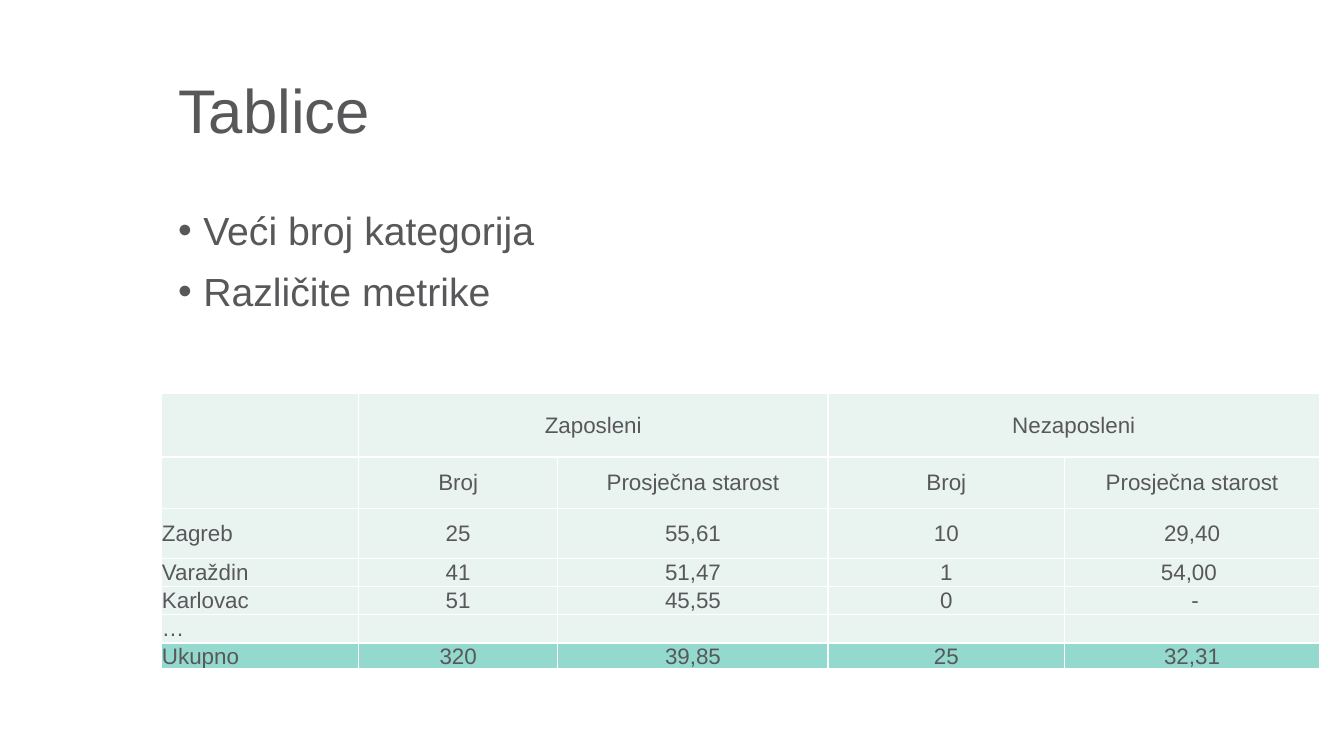
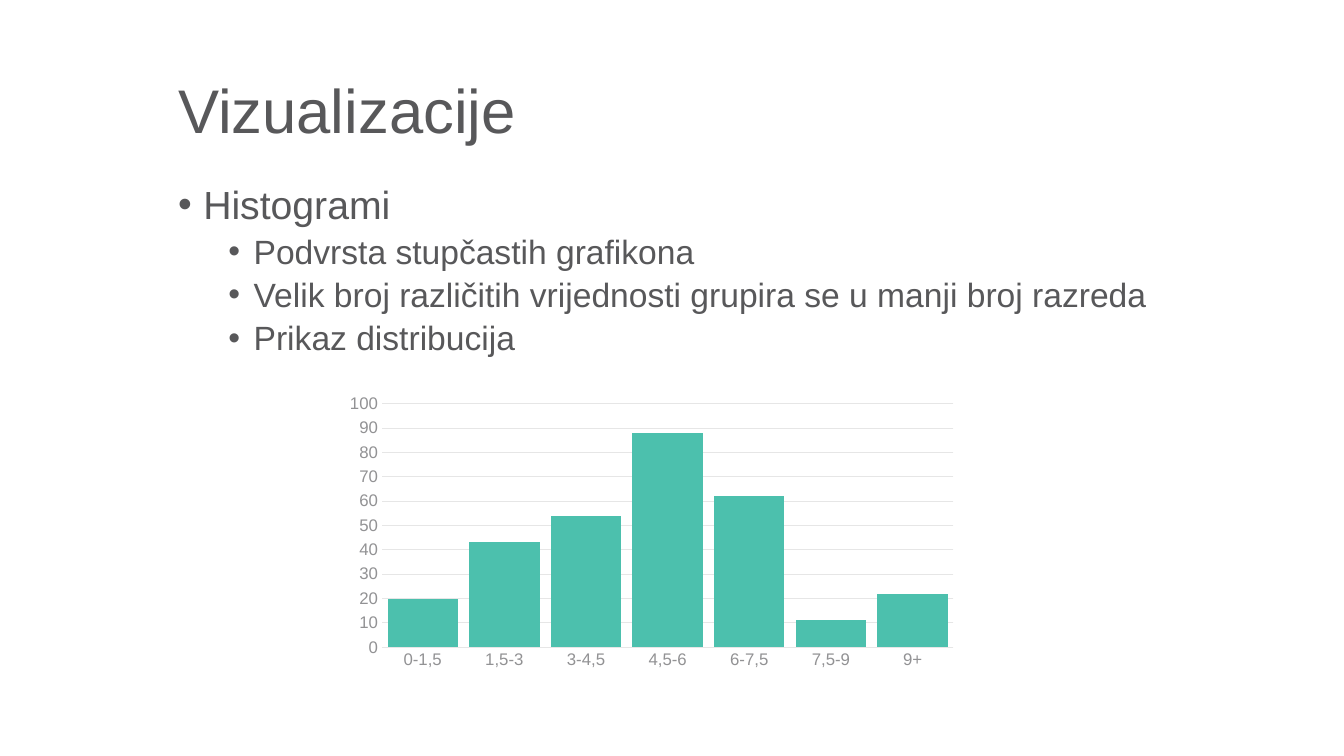
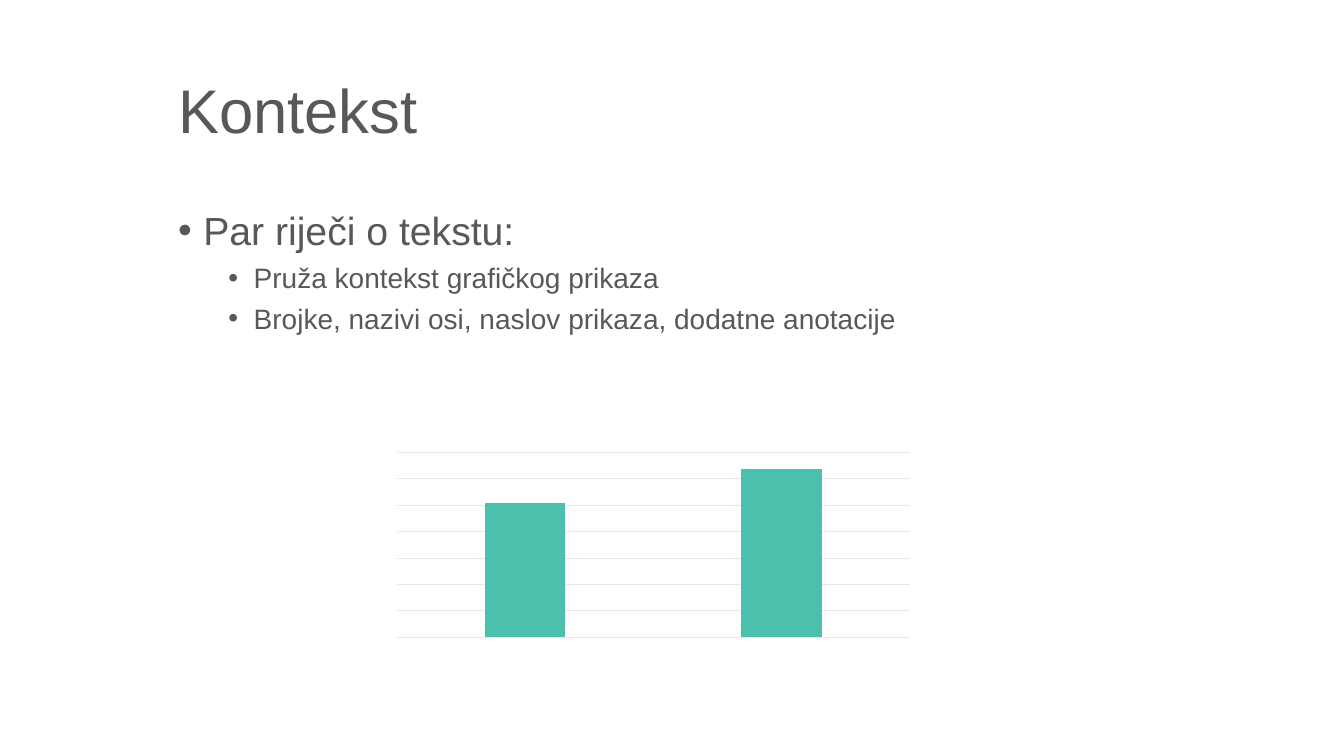
"""Builds three slides on tables, histograms and the context of charts."""
import lxml.etree
import pptx
import pptx.chart.data
import pptx.dml.color
import pptx.enum.chart
import pptx.enum.dml
import pptx.enum.text
import pptx.oxml.ns
import pptx.util

Pt = pptx.util.Pt
RGBColor = pptx.dml.color.RGBColor
ALIGN = pptx.enum.text.PP_ALIGN
MIDDLE = pptx.enum.text.MSO_ANCHOR.MIDDLE

FONT = "Arial"
GREY = RGBColor(0x58, 0x58, 0x5A)
LABEL_GREY = RGBColor(0x92, 0x92, 0x94)
GRID_GREY = RGBColor(0xE6, 0xE6, 0xE6)
WHITE = RGBColor(0xFF, 0xFF, 0xFF)
PALE_MINT = RGBColor(0xE9, 0xF4, 0xF1)
MINT = RGBColor(0x94, 0xD9, 0xCE)
TEAL = RGBColor(0x4C, 0xC0, 0xAD)

LEFT, CONTENT_WIDTH = 120, 774
INDENT = 18
CELL_MARGIN = 0.72
COLUMN_WIDTHS = [141, 142.5, 193, 169, 182]
ROW_HEIGHTS = [45.5, 36.5, 36, 20, 20, 20, 18]
REGIONS = [
    ["", "Zaposleni", "", "Nezaposleni", ""],
    ["", "Broj", "Prosječna starost", "Broj", "Prosječna starost"],
    ["Zagreb", "25", "55,61", "10", "29,40"],
    ["Varaždin", "41", "51,47", "1", "54,00 "],
    ["Karlovac", "51", "45,55", "0", " -"],
    ["…", "", "", "", ""],
    ["Ukupno", "320", "39,85", "25", "32,31"],
]
CLASSES = ["0-1,5", "1,5-3", "3-4,5", "4,5-6", "6-7,5", "7,5-9", "9+"]


def add_xml(parent, tag, **attributes):
    """Append a DrawingML element and return it."""
    return lxml.etree.SubElement(parent, pptx.oxml.ns.qn(tag), attributes)


def style_font(font, size, color=GREY):
    """Set the typeface, size and colour of a font."""
    font.name = FONT
    font.size = Pt(size)
    font.color.rgb = color


def style_runs(paragraph, size):
    """Format all runs of a paragraph."""
    for run in paragraph.runs:
        style_font(run.font, size)


def place(shape, left, top, width, height):
    """Move and size a shape, in points."""
    shape.left, shape.top = Pt(left), Pt(top)
    shape.width, shape.height = Pt(width), Pt(height)


def add_slide(deck, heading, points, body_top=144, sub_size=24, line_spacing=1.0):
    """Add a slide with a title and a list of (level, text) points."""
    slide = deck.slides.add_slide(deck.slide_layouts[1])
    title, body = slide.placeholders
    place(title, LEFT, 29, CONTENT_WIDTH, 104)
    title.text_frame.text = heading
    title.text_frame.vertical_anchor = MIDDLE
    title.text_frame.auto_size = pptx.enum.text.MSO_AUTO_SIZE.NONE
    heading_line = title.text_frame.paragraphs[0]
    heading_line.alignment = ALIGN.LEFT
    heading_line.line_spacing = 0.9
    style_runs(heading_line, 44)

    place(body, LEFT, body_top, CONTENT_WIDTH, 343)
    body.text_frame.auto_size = pptx.enum.text.MSO_AUTO_SIZE.NONE
    body.text_frame.text = "\n".join(text for _, text in points)
    for index, (level, _) in enumerate(points):
        point = body.text_frame.paragraphs[index]
        add_bullet(point, level)
        point.line_spacing = line_spacing
        point.space_before = Pt((5 if level else 10) if index else 0)
        style_runs(point, sub_size if level else 28)
    return slide


def add_bullet(paragraph, level):
    """Give a paragraph a level, a hanging indent and a round bullet."""
    paragraph.level = level
    properties = paragraph._p.get_or_add_pPr()
    properties.set("marL", str(Pt(INDENT * (1 + 2 * level))))
    properties.set("indent", str(-Pt(INDENT)))
    add_xml(properties, "a:buFont", typeface=FONT)
    add_xml(properties, "a:buChar", char="•")


def add_borders(cell):
    """Draw white lines around a table cell."""
    properties = cell._tc.get_or_add_tcPr()
    for side in "LRTB":
        line = add_xml(properties, f"a:ln{side}", w=str(Pt(1)))
        fill = add_xml(line, "a:solidFill")
        add_xml(fill, "a:srgbClr", val=str(WHITE))


def fill_cell(cell, text, fill, alignment):
    """Write and format one table cell."""
    add_borders(cell)
    cell.fill.solid()
    cell.fill.fore_color.rgb = fill
    cell.margin_left = cell.margin_right = cell.margin_top = Pt(CELL_MARGIN)
    cell.margin_bottom = 0
    cell.vertical_anchor = MIDDLE
    paragraph = cell.text_frame.paragraphs[0]
    paragraph.alignment = alignment
    if text:
        paragraph.text = text
        style_runs(paragraph, 16)
    else:
        add_xml(paragraph._p, "a:endParaRPr", sz="1600")


def add_region_table(slide):
    """Add the table of regions with grouped headings and a total row."""
    table = slide.shapes.add_table(
        len(REGIONS), len(COLUMN_WIDTHS), Pt(115), Pt(281),
        Pt(sum(COLUMN_WIDTHS)), Pt(sum(ROW_HEIGHTS))).table
    table.first_row = table.horz_banding = False
    for column, width in zip(table.columns, COLUMN_WIDTHS):
        column.width = Pt(width)
    for row, height in zip(table.rows, ROW_HEIGHTS):
        row.height = Pt(height)
    for y, region in enumerate(REGIONS):
        fill = MINT if region[0] == "Ukupno" else PALE_MINT
        for x, text in enumerate(region):
            fill_cell(table.cell(y, x), text, fill, ALIGN.CENTER if x else ALIGN.LEFT)
    for x in (1, 3):
        table.cell(0, x).merge(table.cell(0, x + 1))


def add_columns(slide, box, categories, values, gap, step, steps):
    """Add a plain column chart whose value axis has equal steps from zero."""
    data = pptx.chart.data.CategoryChartData()
    data.categories = categories
    data.add_series("Series 1", values)
    chart = slide.shapes.add_chart(
        pptx.enum.chart.XL_CHART_TYPE.COLUMN_CLUSTERED, *map(Pt, box), data).chart
    chart.has_title = chart.has_legend = False
    style_font(chart.font, 10)
    plot = chart.plots[0]
    plot.gap_width = gap
    plot.vary_by_categories = False
    columns = plot.series[0].format.fill
    columns.solid()
    columns.fore_color.rgb = TEAL

    scale = chart.value_axis
    scale.minimum_scale, scale.maximum_scale = 0, step * steps
    scale.major_unit = step
    scale.format.line.fill.background()
    for line in (scale.major_gridlines.format.line, chart.category_axis.format.line):
        line.color.rgb = GRID_GREY
        line.width = Pt(0.75)
    for axis in (scale, chart.category_axis):
        axis.major_tick_mark = pptx.enum.chart.XL_TICK_MARK.NONE
        style_font(axis.tick_labels.font, 12, LABEL_GREY)
    return chart


def main():
    """Build and save the deck."""
    deck = pptx.Presentation()
    deck.slide_width, deck.slide_height = Pt(960), Pt(540)

    tables = add_slide(deck, "Tablice", [
        (0, "Veći broj kategorija"), (0, "Različite metrike")])
    add_region_table(tables)

    histograms = add_slide(deck, "Vizualizacije", [
        (0, "Histogrami"),
        (1, "Podvrsta stupčastih grafikona"),
        (1, "Velik broj različitih vrijednosti grupira se u manji broj razreda"),
        (1, "Prikaz distribucija")], body_top=129, line_spacing=0.9)
    add_columns(histograms, (241, 278, 449, 204), CLASSES,
                [20, 43, 54, 88, 62, 11, 22], gap=16, step=10, steps=10)

    context = add_slide(deck, "Kontekst", [
        (0, "Par riječi o tekstu:"),
        (1, "Pruža kontekst grafičkog prikaza"),
        (1, "Brojke, nazivi osi, naslov prikaza, dodatne anotacije")], sub_size=20)
    bare = add_columns(context, (276, 320.5, 381.5, 137.5), ["1", "2"],
                       [80, 100], gap=219, step=15.71, steps=7)
    bare.value_axis.visible = bare.category_axis.visible = False

    deck.save("out.pptx")


if __name__ == "__main__":
    main()
